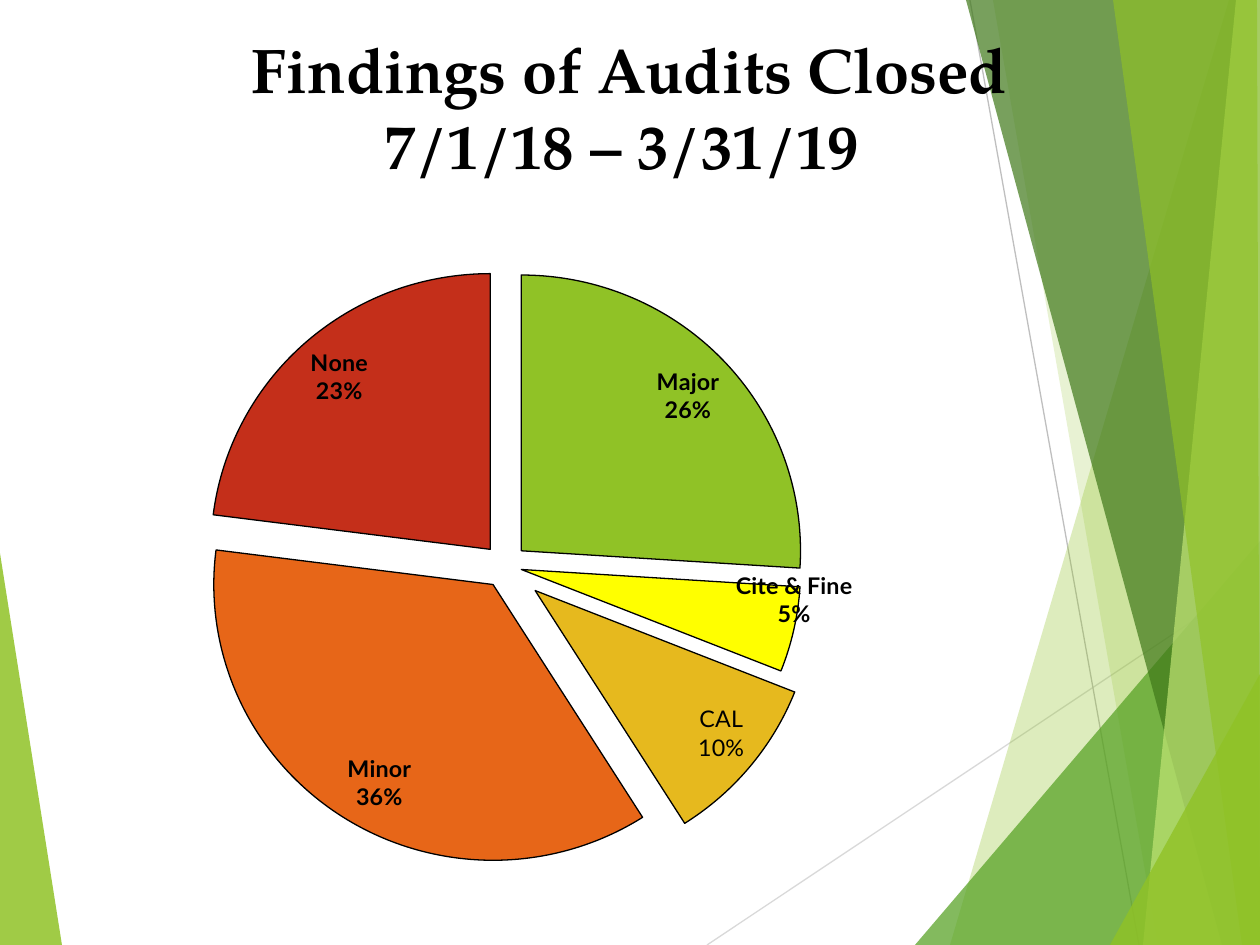
"""Build the audit findings slide: a faceted green border, a title and an exploded pie."""
from lxml import etree
from pptx import Presentation
from pptx.chart.data import CategoryChartData
from pptx.dml.color import RGBColor
from pptx.enum.chart import XL_CHART_TYPE, XL_LABEL_POSITION
from pptx.enum.shapes import MSO_CONNECTOR
from pptx.enum.text import MSO_ANCHOR, PP_ALIGN
from pptx.oxml.ns import qn
from pptx.util import Emu, Pt

PIE = XL_CHART_TYPE.PIE
INSIDE_END = XL_LABEL_POSITION.INSIDE_END
STRAIGHT = MSO_CONNECTOR.STRAIGHT
MIDDLE = MSO_ANCHOR.MIDDLE
CENTER = PP_ALIGN.CENTER

EMU_PER_PX = 914400 / 126
WIDTH, HEIGHT = 1260, 945
TITLE_FONT, CHART_FONT = "TeX Gyre Pagella", "Lato"
LABEL_SIZE = Pt(13.3)
COLORS = {
    "black": "000000",
    "lime": "90C226",
    "green": "54A021",
    "forest": "3F7819",
    "pale": "C0E474",
    "light gray": "D9D9D9",
    "gray": "BFBFBF",
    "yellow": "FFFF00",
    "gold": "E6B91E",
    "orange": "E76618",
    "red": "C42F1A",
}


def px(length):
    return Emu(round(length * EMU_PER_PX))


def color(name):
    return RGBColor.from_string(COLORS[name])


deck = Presentation()
deck.slide_width, deck.slide_height = px(WIDTH), px(HEIGHT)
page = deck.slides.add_slide(deck.slide_layouts[6])
shapes = page.shapes

rays = [
    ((707, HEIGHT), (WIDTH, 576), "light gray"),
    ((970, 0), (1139, HEIGHT), "gray"),
]
facets = [
    ([(0, 553), (62, HEIGHT), (0, HEIGHT)], "lime", 85),
    ([(1229, 0), (950, HEIGHT), (WIDTH, HEIGHT), (WIDTH, 0)], "lime", 30),
    ([(993, 0), (1158, HEIGHT), (WIDTH, HEIGHT), (WIDTH, 0)], "lime", 20),
    ([(915, HEIGHT), (WIDTH, 541), (WIDTH, HEIGHT)], "green", 72),
    ([(966, 0), (1222, HEIGHT), (WIDTH, HEIGHT), (WIDTH, 0)], "forest", 70),
    ([(1236, 0), (1143, HEIGHT), (WIDTH, HEIGHT), (WIDTH, 0)], "pale", 70),
    ([(1113, 0), (1242, HEIGHT), (WIDTH, HEIGHT), (1257, 0)], "lime", 65),
    ([(1110, HEIGHT), (WIDTH, 674), (WIDTH, HEIGHT)], "lime", 80),
]

for start, end, tint in rays:
    ray = shapes.add_connector(STRAIGHT, *map(px, start + end))
    ray.line.color.rgb = color(tint)
    ray.line.width = Pt(0.75)
    etree.SubElement(ray._element.spPr, qn("a:effectLst"))

for corners, tint, opacity in facets:
    builder = shapes.build_freeform(*corners[0], scale=EMU_PER_PX)
    builder.add_line_segments(corners[1:], close=True)
    facet = builder.convert_to_shape()
    facet.shadow.inherit = False
    facet.line.fill.background()
    facet.fill.solid()
    facet.fill.fore_color.rgb = color(tint)
    fill_color = facet._element.spPr.find(".//" + qn("a:srgbClr"))
    etree.SubElement(fill_color, qn("a:alpha"), val=str(opacity * 1000))

title_box = shapes.add_textbox(px(73), px(24), px(1113), px(165))
title = title_box.text_frame
title.word_wrap = True
title.vertical_anchor = MIDDLE
for index, line in enumerate(["Findings of Audits Closed", "7/1/18 – 3/31/19 "]):
    para = title.add_paragraph() if index else title.paragraphs[0]
    para.alignment = CENTER
    span = para.add_run()
    span.text = line
    span.font.name = TITLE_FONT
    span.font.size = Pt(36)
    span.font.bold = True
    span.font.color.rgb = color("black")

findings = [
    ("Major", 26, "lime", 8),
    ("Cite & Fine", 5, "yellow", 6),
    ("CAL", 10, "gold", 14),
    ("Minor", 36, "orange", 8),
    ("None", 23, "red", 8),
]
data = CategoryChartData()
data.categories = [finding[0] for finding in findings]
data.add_series("Series 1", [finding[1] for finding in findings])
chart = shapes.add_chart(PIE, px(42), px(273), px(945), px(588), data).chart
chart.has_legend = False
chart.has_title = False
chart.font.name = CHART_FONT
chart.font.size = Pt(10)
chart.font.color.rgb = color("black")
pie = chart.plots[0]
pie.vary_by_categories = True
series = pie.series[0]

for index, (name, share, tint, explosion) in enumerate(findings):
    slice_format = series.points[index].format
    slice_format.fill.solid()
    slice_format.fill.fore_color.rgb = color(tint)
    slice_format.line.color.rgb = color("black")
    slice_format.line.width = Pt(0.75)
    slice_xml = series._element.findall(qn("c:dPt"))[index]
    offset = etree.Element(qn("c:explosion"), val=str(explosion))
    slice_xml.find(qn("c:spPr")).addprevious(offset)

labels = series.data_labels
labels.show_value = False
labels.show_category_name = True
labels.show_percentage = True
labels.number_format = "0%"
labels.number_format_is_linked = False
labels.position = INSIDE_END

cite_label = series.points[1].data_label
cite_label.position = INSIDE_END
for font in (labels.font, cite_label.font):
    font.name = CHART_FONT
    font.size = LABEL_SIZE
    font.bold = True
    font.color.rgb = color("black")

cal_label = series.points[2].data_label
cal_label.position = INSIDE_END
cal_text = cal_label.text_frame
for index, line in enumerate(["CAL", "10%"]):
    para = cal_text.add_paragraph() if index else cal_text.paragraphs[0]
    span = para.add_run()
    span.text = line
    span.font.name = CHART_FONT
    span.font.size = LABEL_SIZE
    span.font.bold = False
    span.font.color.rgb = color("black")

labels_xml = series._element.find(qn("c:dLbls"))
cite_xml = labels_xml.find(qn("c:dLbl"))
for tag, shown in (("c:showVal", "0"), ("c:showCatName", "1"), ("c:showPercent", "1")):
    cite_xml.find(qn(tag)).set("val", shown)
for parent in (labels_xml, cite_xml):
    separator = etree.Element(qn("c:separator"))
    separator.text = "\n"
    parent.find(qn("c:showBubbleSize")).addnext(separator)

plot_xml = chart._chartSpace.chart.plotArea
for old_layout in plot_xml.findall(qn("c:layout")):
    plot_xml.remove(old_layout)
plot_layout = etree.Element(qn("c:layout"))
plot_xml.insert(0, plot_layout)
cite_layout = etree.Element(qn("c:layout"))
cite_xml.find(qn("c:idx")).addnext(cite_layout)
layouts = [
    (plot_layout, [("layoutTarget", "inner"), ("xMode", "edge"), ("yMode", "edge"),
                   ("x", "0.16"), ("y", "0.02"), ("w", "0.66"), ("h", "0.95")]),
    (cite_layout, [("x", "0.07"), ("y", "0")]),
]
for layout, settings in layouts:
    manual = etree.SubElement(layout, qn("c:manualLayout"))
    for tag, value in settings:
        etree.SubElement(manual, qn("c:" + tag), val=value)

deck.save("out.pptx")
